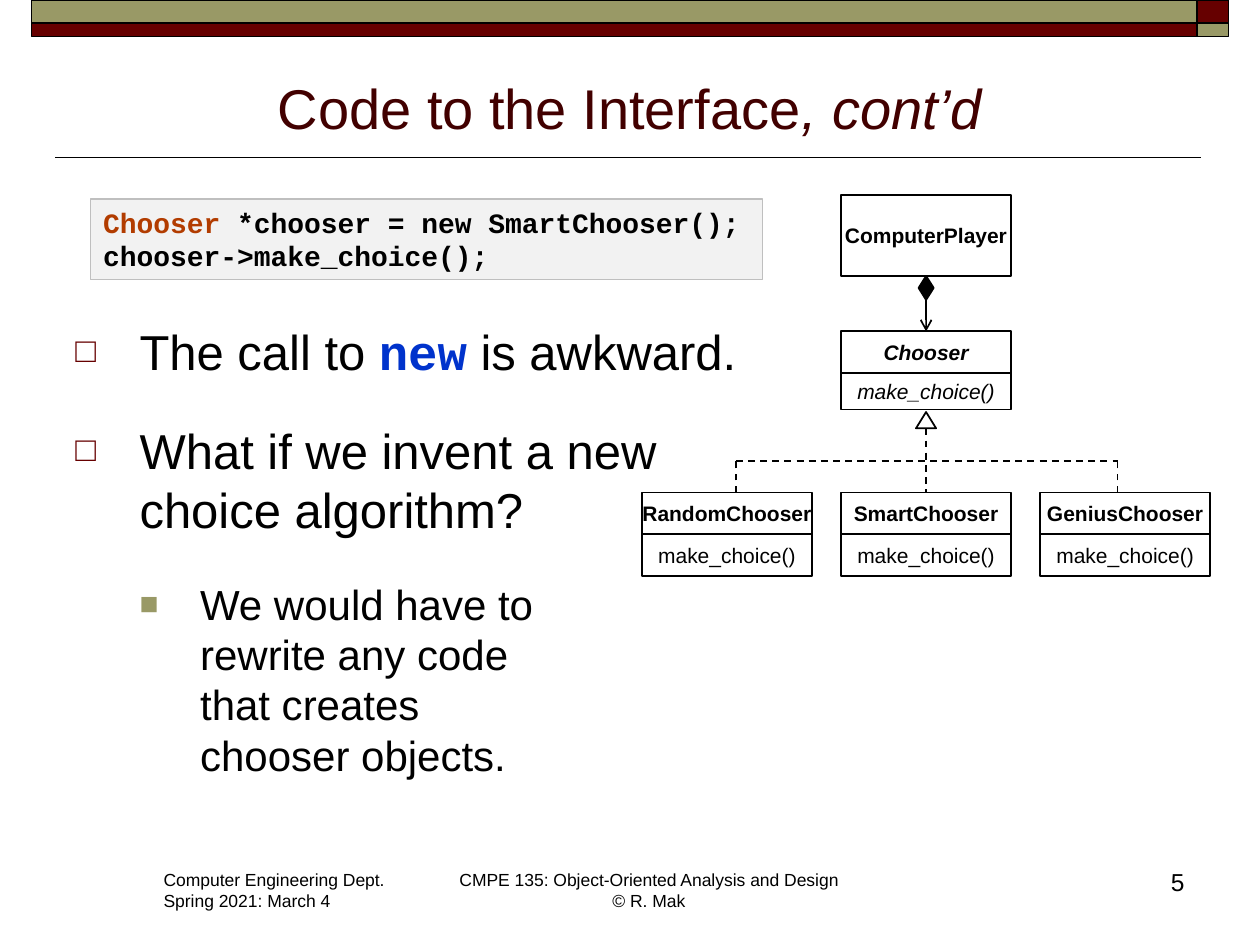
import copy

import pptx
import pptx.dml.color
import pptx.enum.dml
import pptx.enum.shapes
import pptx.enum.text
import pptx.oxml
import pptx.oxml.ns
import pptx.util
from pptx.util import Inches

COLORS = {
    "black": "000000", "maroon": "660000", "olive": "999966", "title": "420000",
    "keyword": "0033CC", "type": "B23C00", "code_fill": "F2F2F2", "code_line": "BFBFBF",
}
SHAPES = pptx.enum.shapes.MSO_SHAPE
ANCHORS = pptx.enum.text.MSO_ANCHOR
ALIGNMENTS = pptx.enum.text.PP_ALIGN
CODE_FONT = "Courier New"
CENTER = 7.35
COLUMN_STEP = 1.58
BOX_WIDTH = 1.35


def rgb(name):
    """Return the named palette color."""
    return pptx.dml.color.RGBColor.from_string(COLORS[name])


def add_child(parent, tag, **attributes):
    """Append a DrawingML element with attributes."""
    child = pptx.oxml.parse_xml(f"<a:{tag} {pptx.oxml.ns.nsdecls('a')}/>")
    for key, value in attributes.items():
        child.set(key, str(value))
    parent.append(child)


def format_font(font, size=12, color="black", name="Arial", bold=False, italic=False):
    """Apply character formatting."""
    font.size = pptx.util.Pt(size)
    font.name = name
    font.bold = bold
    font.italic = italic
    font.color.rgb = rgb(color)


def add_text(paragraph, text, **style):
    """Add formatted text, turning newlines into line breaks."""
    for index, line in enumerate(text.split("\n")):
        if index:
            paragraph.add_line_break()
            line_break = paragraph._p[-1]
        run = paragraph.add_run()
        run.text = line
        format_font(run.font, **style)
        if index:
            line_break.append(copy.deepcopy(run._r.rPr))


def write_text(shape, paragraphs, align=ALIGNMENTS.LEFT, anchor=ANCHORS.TOP, wrap=True, **style):
    """Fill a shape with paragraphs, each a list of (text, overrides) runs."""
    frame = shape.text_frame
    frame.word_wrap = wrap
    frame.vertical_anchor = anchor
    for index, runs in enumerate(paragraphs):
        paragraph = frame.add_paragraph() if index else frame.paragraphs[0]
        paragraph.alignment = align
        for text, overrides in runs:
            add_text(paragraph, text, **{**style, **overrides})


def add_text_box(slide, left, top, width, height, paragraphs, **style):
    """Add a text box holding paragraphs."""
    box = slide.shapes.add_textbox(Inches(left), Inches(top), Inches(width), Inches(height))
    write_text(box, paragraphs, **style)
    return box


def add_box(slide, left, top, width, height, kind=SHAPES.RECTANGLE, fill=None, line="black", weight=1):
    """Add an outlined preset shape without a shadow."""
    shape = slide.shapes.add_shape(kind, Inches(left), Inches(top), Inches(width), Inches(height))
    shape.shadow.inherit = False
    if fill:
        shape.fill.solid()
        shape.fill.fore_color.rgb = rgb(fill)
    else:
        shape.fill.background()
    shape.line.color.rgb = rgb(line)
    shape.line.width = pptx.util.Pt(weight)
    return shape


def add_line(slide, start, end, dashed=False, arrow=False):
    """Add a straight line between two points."""
    points = [Inches(value) for value in (*start, *end)]
    line = slide.shapes.add_connector(pptx.enum.shapes.MSO_CONNECTOR.STRAIGHT, *points)
    line.line.color.rgb = rgb("black")
    line.line.width = pptx.util.Pt(1)
    if dashed:
        line.line.dash_style = pptx.enum.dml.MSO_LINE.DASH
    if arrow:
        add_child(line.line._get_or_add_ln(), "tailEnd", type="arrow")
    add_child(line._element.spPr, "effectLst")
    return line


def add_label_box(slide, center, top, height, label, **style):
    """Add one centered compartment of a class."""
    box = add_box(slide, center - BOX_WIDTH / 2, top, BOX_WIDTH, height)
    write_text(box, [[(label, style)]], align=ALIGNMENTS.CENTER, anchor=ANCHORS.MIDDLE, wrap=False)
    return box


def add_class(slide, center, top, name, method_height=0.33, italic=False):
    """Add a class with its method and return the name compartment."""
    name_height = 0.33
    header = add_label_box(slide, center, top, name_height, name, bold=True, italic=italic)
    add_label_box(slide, center, top + name_height, method_height, "make_choice()", italic=italic)
    return header


def add_bullet(paragraph, symbol, color, size, margin, indent):
    """Give a paragraph a colored hanging bullet."""
    properties = paragraph._p.get_or_add_pPr()
    properties.set("marL", str(Inches(margin)))
    properties.set("indent", str(Inches(indent)))
    add_child(properties, "buClr")
    add_child(properties[-1], "srgbClr", val=COLORS[color])
    add_child(properties, "buSzPct", val=size * 1000)
    add_child(properties, "buFont", typeface="Arial")
    add_child(properties, "buChar", char=symbol)


def add_frame(slide):
    """Add the top bands, title, rule and footer."""
    for left, width, colors in ((0.25, 9.25, ("olive", "maroon")), (9.5, 0.25, ("maroon", "olive"))):
        for top, height, color in zip((0, 0.18), (0.18, 0.11), colors):
            add_box(slide, left, top, width, height, fill=color)
    add_line(slide, (0.44, 1.25), (9.53, 1.25))
    title = slide.shapes.title
    title.left, title.top, title.width, title.height = map(Inches, (0.5, 0.45, 9, 0.72))
    write_text(title, [[("Code to the Interface", {}), (", cont’d", {"italic": True})]],
               align=ALIGNMENTS.CENTER, anchor=ANCHORS.BOTTOM, size=32, color="title")
    add_text_box(slide, 1.2, 6.85, 1.97, 0.44,
                 [[("Computer Engineering Dept.", {})], [("Spring 2021: March 4", {})]],
                 size=10, wrap=False)
    add_text_box(slide, 3.53, 6.85, 3.24, 0.44,
                 [[("CMPE 135: Object-Oriented Analysis and Design\n© R. Mak", {})]],
                 size=10, wrap=False, align=ALIGNMENTS.CENTER)
    add_text_box(slide, 8.9, 6.83, 0.6, 0.5, [[("5", {})]], size=14, align=ALIGNMENTS.RIGHT)


def add_body(slide):
    """Add the code sample and the bullet list."""
    code = add_box(slide, 0.72, 1.58, 5.33, 0.64, fill="code_fill", line="code_line", weight=0.75)
    write_text(code, [[("Chooser", {"color": "type"}), (" *chooser = new SmartChooser();", {})],
                      [("chooser->make_choice();", {})]],
               wrap=False, size=16, name=CODE_FONT, bold=True)
    keyword = {"name": CODE_FONT, "color": "keyword", "bold": True}
    body = add_text_box(slide, 0.5, 2.5, 9, 4.2, [
        [("The call to ", {}), ("new", keyword), (" is awkward.", {})],
        [("What if we invent a new\nchoice algorithm?", {})],
        [("We would have to\nrewrite any code\nthat creates\nchooser objects.", {"size": 24})],
    ], size=28)
    paragraphs = body.text_frame.paragraphs
    for paragraph in paragraphs[1:]:
        paragraph.space_before = pptx.util.Pt(23)
    for paragraph in paragraphs[:2]:
        add_bullet(paragraph, "□", "maroon", 70, 0.51, -0.51)
    add_bullet(paragraphs[2], "■", "olive", 75, 0.99, -0.48)


def add_diagram(slide):
    """Add the class diagram."""
    add_label_box(slide, CENTER, 1.55, 0.64, "ComputerPlayer", bold=True)
    chooser = add_class(slide, CENTER, 2.63, "Chooser", method_height=0.29, italic=True)
    names = ("RandomChooser", "SmartChooser", "GeniusChooser")
    headers = [add_class(slide, CENTER + (index - 1) * COLUMN_STEP, 3.91, name)
               for index, name in enumerate(names)]
    diamond = add_box(slide, CENTER - 0.06, 2.19, 0.12, 0.19, kind=SHAPES.DIAMOND, fill="black")
    arrow = add_line(slide, (CENTER, 2.38), (CENTER, 2.63), arrow=True)
    arrow.begin_connect(diamond, 2)
    arrow.end_connect(chooser, 0)
    add_box(slide, CENTER - 0.08, 3.27, 0.16, 0.13, kind=SHAPES.ISOSCELES_TRIANGLE)
    stem = add_line(slide, (CENTER, 3.4), (CENTER, 3.91), dashed=True)
    stem.end_connect(headers[1], 0)
    branches = (5.84, 8.87)
    add_line(slide, (branches[0], 3.66), (branches[1], 3.66), dashed=True)
    for branch in branches:
        add_line(slide, (branch, 3.91), (branch, 3.66), dashed=True)


def main():
    """Build and save the slide."""
    presentation = pptx.Presentation()
    presentation.slide_width, presentation.slide_height = Inches(10), Inches(7.5)
    slide = presentation.slides.add_slide(presentation.slide_layouts[5])
    add_frame(slide)
    add_body(slide)
    add_diagram(slide)
    presentation.save("out.pptx")


if __name__ == "__main__":
    main()
